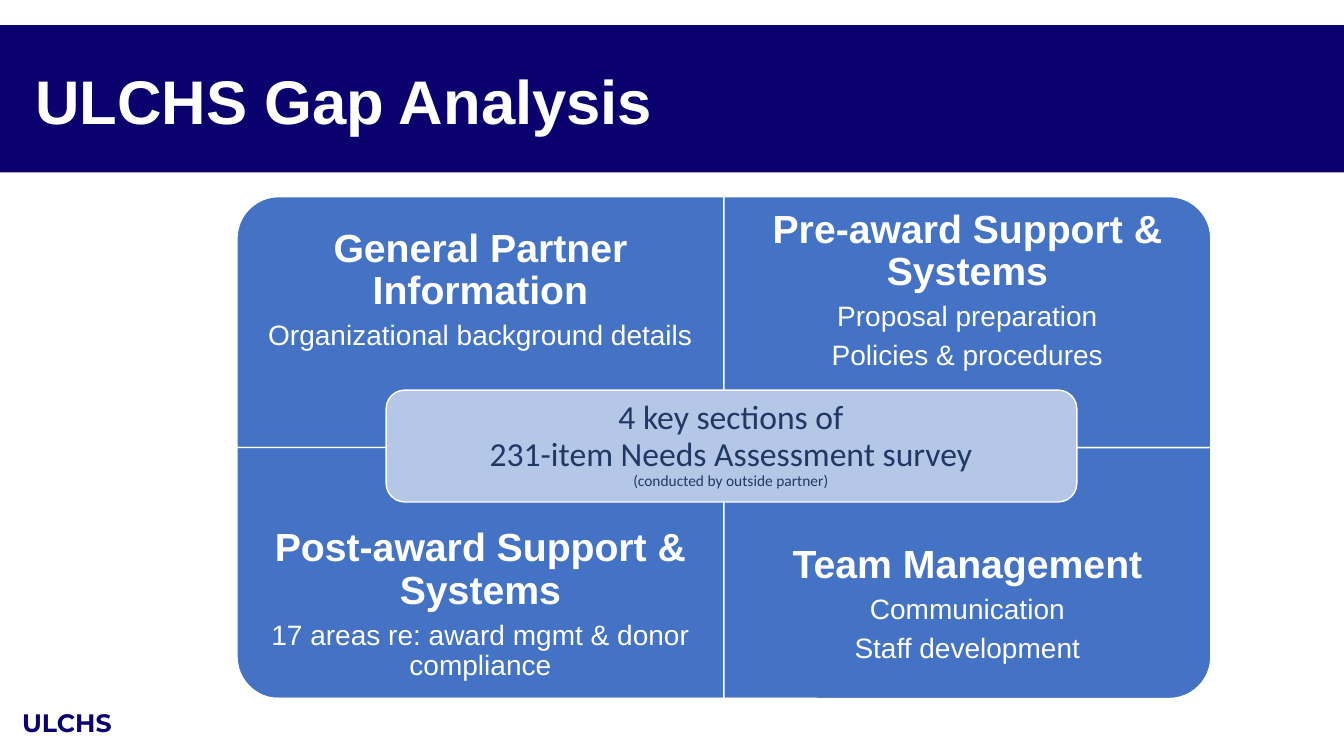
from pptx import Presentation
from pptx.dml.color import RGBColor
from pptx.enum.shapes import MSO_SHAPE
from pptx.enum.text import MSO_ANCHOR, PP_ALIGN
from pptx.util import Pt

PX = 9144  # EMU per px, 100 px to the inch

NAVY = RGBColor(0x0A, 0x01, 0x6E)
BLUE = RGBColor(0x44, 0x72, 0xC4)
PALE_BLUE = RGBColor(0xB4, 0xC7, 0xE7)
DARK_BLUE = RGBColor(0x20, 0x38, 0x64)
WHITE = RGBColor(0xFF, 0xFF, 0xFF)

RECT = MSO_SHAPE.RECTANGLE
ROUNDED = MSO_SHAPE.ROUNDED_RECTANGLE
ONE_ROUND = MSO_SHAPE.ROUND_1_RECTANGLE
TOP, MIDDLE = MSO_ANCHOR.TOP, MSO_ANCHOR.MIDDLE
LEFT, CENTER = PP_ALIGN.LEFT, PP_ALIGN.CENTER

MATRIX_X, MATRIX_Y = 235, 195
QUADRANT_W, QUADRANT_H = 483, 249
TEXT_H = 186

# column, row, rotation that turns the round corner outwards, heading, details
SECTIONS = [
    (0, 0, 270, "General Partner Information",
     ["Organizational background details"]),
    (1, 0, 0, "Pre-award Support & Systems",
     ["Proposal preparation", "Policies & procedures"]),
    (0, 1, 180, "Post-award Support & Systems",
     ["17 areas re: award mgmt & donor compliance"]),
    (1, 1, 90, "Team Management",
     ["Communication", "Staff development"]),
]


def add_panel(slide, kind, x, y, w, h, fill, outlined=False):
    panel = slide.shapes.add_shape(kind, x * PX, y * PX, w * PX, h * PX)
    panel.shadow.inherit = False
    panel.fill.solid()
    panel.fill.fore_color.rgb = fill
    if outlined:
        panel.line.color.rgb = WHITE
        panel.line.width = Pt(1)
    else:
        panel.line.fill.background()
    return panel


def add_text(slide, x, y, w, h, lines, font, color, align=CENTER,
             anchor=MIDDLE, inset=10, spacing=0.9):
    """Lines are (text, size, bold, space after) tuples."""
    box = slide.shapes.add_textbox(x * PX, y * PX, w * PX, h * PX)
    frame = box.text_frame
    frame.word_wrap = True
    frame.vertical_anchor = anchor
    frame.margin_left = frame.margin_right = inset * PX
    frame.margin_top = frame.margin_bottom = min(inset, TEXT_H) * PX
    for index, (text, size, bold, after) in enumerate(lines):
        paragraph = frame.add_paragraph() if index else frame.paragraphs[0]
        paragraph.text = text
        paragraph.alignment = align
        paragraph.line_spacing = spacing
        paragraph.space_after = Pt(after)
        paragraph.font.name = font
        paragraph.font.size = Pt(size)
        paragraph.font.bold = bold
        paragraph.font.color.rgb = color


def add_title(slide, title):
    add_panel(slide, RECT, 0, 25, 1333, 146, NAVY)
    add_text(slide, 25, 31, 1252, 145, [(title, 44, True, 0)],
             "Arial", WHITE, LEFT)


def add_quadrant(slide, column, row, rotation, heading, details):
    x = MATRIX_X + column * QUADRANT_W
    y = MATRIX_Y + row * QUADRANT_H
    w, h = QUADRANT_W, QUADRANT_H
    if rotation % 180:
        # A quarter turn swaps the sides around the same centre.
        panel = add_panel(slide, ONE_ROUND, x + (w - h) // 2,
                          y + (h - w) // 2, h, w, BLUE, True)
    else:
        panel = add_panel(slide, ONE_ROUND, x, y, w, h, BLUE, True)
    panel.rotation = rotation
    text_y = y + row * (h - TEXT_H)
    lines = [(heading, 28, True, 6)]
    lines += [(detail, 20, False, 6) for detail in details]
    add_text(slide, x, text_y, w, TEXT_H, lines, "Arial", WHITE, inset=22)


def add_center_label(slide):
    add_panel(slide, ROUNDED, 383, 387, 685, 111, PALE_BLUE, True)
    add_text(slide, 388, 392, 674, 100, [
        ("4 key sections of", 24, False, 0),
        ("231-item Needs Assessment survey", 24, False, 0),
        ("(conducted by outside partner)", 11, False, 6),
    ], "Calibri", DARK_BLUE)


def add_footer(slide, text):
    add_panel(slide, RECT, 12, 692, 798, 42, WHITE)
    add_text(slide, 12, 692, 798, 42, [(text, 18, True, 0)],
             "Montserrat", NAVY, LEFT, TOP, spacing=1.0, inset=10)


def main():
    deck = Presentation()
    deck.slide_width, deck.slide_height = 1333 * PX, 750 * PX
    slide = deck.slides.add_slide(deck.slide_layouts[6])
    add_title(slide, "ULCHS Gap Analysis")
    for section in SECTIONS:
        add_quadrant(slide, *section)
    add_center_label(slide)
    add_footer(slide, "ULCHS")
    deck.save("out.pptx")


if __name__ == "__main__":
    main()
